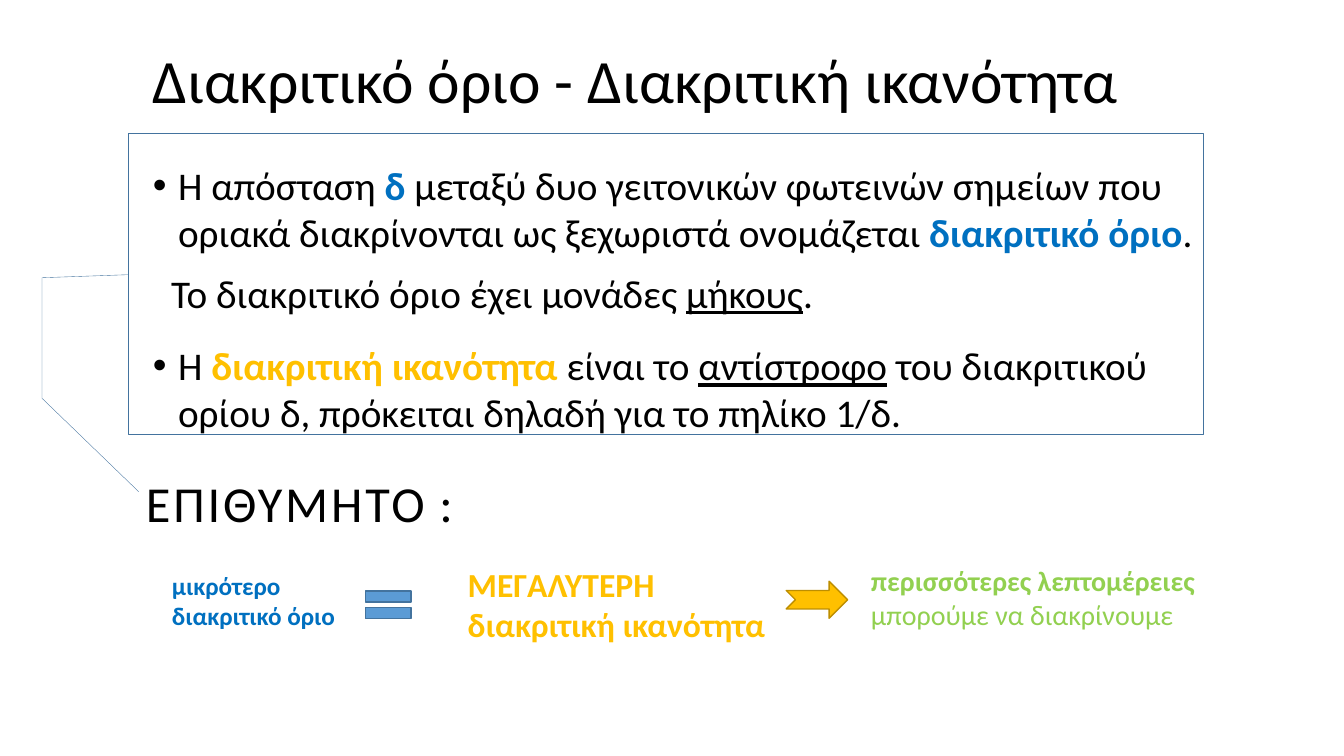
"""Build a slide on the limit of resolution and resolving power."""
from dataclasses import dataclass, field

from lxml import etree
from pptx import Presentation, util as u
from pptx.dml.color import RGBColor
from pptx.enum import shapes, text
from pptx.oxml.ns import qn

COLUMNS, ROWS = 160, 90
FONT = "Calibri"
COLORS = {
    "black": "000000", "blue": "0070C0", "gold": "FFC000", "green": "92D050",
    "steel": "5B9BD5", "steel_line": "43739E", "gold_line": "BD8E00",
}


@dataclass(frozen=True)
class Area:
    column: float
    row: float
    columns: float
    rows: float


@dataclass(frozen=True)
class Words:
    text: str
    color: str = "black"
    format: dict = field(default_factory=dict)
    tracking: int = 0


@dataclass(frozen=True)
class Item:
    words: list[Words]
    format: dict = field(default_factory=dict)
    bullet: str = ""
    margin: float = 0
    indent: float = 0


@dataclass(frozen=True)
class Label:
    area: Area
    size: int
    words: list[Words]
    wrap: bool = True


@dataclass(frozen=True)
class Figure:
    kind: shapes.MSO_SHAPE
    area: Area
    line: str
    line_width: float
    fill: str = ""
    adjustments: tuple[float, ...] = ()


BOLD = {"bold": True}
UNDERLINED = {"underline": True}
BULLETED = {"bullet": "•", "margin": 0.25, "indent": -0.25}

TITLE = Label(Area(17, 1.2, 119.5, 17.4), 44, [Words("Διακριτικό όριο - Διακριτική ικανότητα")])
BODY_AREA = Area(17, 18.6, 127.7, 34.7)
BODY_SIZE = 28
DEFINITIONS = [
    Item([
        Words("Η απόσταση "),
        Words("δ", "blue", BOLD),
        Words(" μεταξύ δυο γειτονικών φωτεινών σημείων που οριακά διακρίνονται "
              "ως ξεχωριστά ονομάζεται "),
        Words("διακριτικό όριο", "blue", BOLD),
        Words("."),
    ], **BULLETED),
    Item([
        Words("Το διακριτικό όριο έχει μονάδες "),
        Words("μήκους", format=UNDERLINED),
        Words("."),
    ], {"space_before": u.Pt(10)}, margin=0.18),
    Item([
        Words("Η "),
        Words("διακριτική ικανότητα ", "gold", BOLD),
        Words("είναι το "),
        Words("αντίστροφο", format=UNDERLINED),
        Words(" του διακριτικού ορίου δ, πρόκειται δηλαδή για το πηλίκο 1/δ."),
    ], {"space_before": u.Pt(18)}, **BULLETED),
]
LABELS = [
    Label(Area(16.2, 55.6, 39.2, 8.5), 36,
          [Words("ΕΠΙΘΥΜΗΤΟ", tracking=200), Words(" :")], wrap=False),
    Label(Area(102.5, 66.5, 43.1, 9.2), 20,
          [Words("περισσότερες λεπτομέρειες ", "green", BOLD),
           Words("μπορούμε να διακρίνουμε", "green")]),
    Label(Area(19.3, 67.3, 25.7, 8.5), 18, [Words("μικρότερο διακριτικό όριο", "blue", BOLD)]),
    Label(Area(54.5, 66.5, 40.1, 10.9), 24,
          [Words("ΜΕΓΑΛΥΤΕΡΗ διακριτική ικανότητα", "gold", BOLD)]),
]
FIGURES = [
    Figure(shapes.MSO_SHAPE.LINE_CALLOUT_3, Area(15.24, 15.84, 128.04, 35.88), "steel_line", 0.25,
           adjustments=(0.47, 0, 0.48, -0.08, 0.88, -0.08, 1.19, 0.01)),
    Figure(shapes.MSO_SHAPE.MATH_EQUAL, Area(42.5, 69.2, 7.4, 5.6), "steel_line", 1, "steel"),
    Figure(shapes.MSO_SHAPE.NOTCHED_RIGHT_ARROW, Area(93.6, 69.2, 7.3, 4.4), "gold_line", 1, "gold"),
]


def apply(target: object, values: dict) -> None:
    for name, value in values.items():
        setattr(target, name, value)


def color(name: str) -> RGBColor:
    return RGBColor.from_string(COLORS[name])


def bounds(presentation, area: Area) -> dict:
    column = presentation.slide_width / COLUMNS
    row = presentation.slide_height / ROWS
    return {
        "left": round(area.column * column), "top": round(area.row * row),
        "width": round(area.columns * column), "height": round(area.rows * row),
    }


def write(paragraph, item: Item, size: int) -> None:
    properties = paragraph._p.get_or_add_pPr()
    properties.set("marL", str(u.Inches(item.margin)))
    properties.set("indent", str(u.Inches(item.indent)))
    if item.bullet:
        etree.SubElement(properties, qn("a:buFont")).set("typeface", "Arial")
        etree.SubElement(properties, qn("a:buChar")).set("char", item.bullet)
    else:
        etree.SubElement(properties, qn("a:buNone"))
    apply(paragraph, {"alignment": text.PP_ALIGN.LEFT, "space_before": u.Pt(0), **item.format})
    for words in item.words:
        run = paragraph.add_run()
        run.text = words.text
        apply(run.font, {"name": FONT, "size": u.Pt(size), **words.format})
        run.font.color.rgb = color(words.color)
        if words.tracking:
            run._r.get_or_add_rPr().set("spc", str(words.tracking))


def add_title(presentation, slide) -> None:
    title = slide.shapes.title
    apply(title, bounds(presentation, TITLE.area))
    apply(title.text_frame, {"auto_size": text.MSO_AUTO_SIZE.NONE,
                             "vertical_anchor": text.MSO_ANCHOR.MIDDLE})
    write(title.text_frame.paragraphs[0], Item(TITLE.words, {"line_spacing": 0.9}), TITLE.size)


def add_definitions(presentation, slide) -> None:
    body = slide.placeholders[1]
    apply(body, bounds(presentation, BODY_AREA))
    frame = body.text_frame
    apply(frame, {"auto_size": text.MSO_AUTO_SIZE.NONE, "vertical_anchor": text.MSO_ANCHOR.TOP})
    for index, item in enumerate(DEFINITIONS):
        paragraph = frame.add_paragraph() if index else frame.paragraphs[0]
        write(paragraph, item, BODY_SIZE)


def add_label(presentation, slide, label: Label) -> None:
    box = slide.shapes.add_textbox(**bounds(presentation, label.area))
    apply(box.text_frame, {"word_wrap": label.wrap,
                           "auto_size": text.MSO_AUTO_SIZE.SHAPE_TO_FIT_TEXT})
    write(box.text_frame.paragraphs[0], Item(label.words), label.size)


def add_figure(presentation, slide, figure: Figure) -> None:
    shape = slide.shapes.add_shape(figure.kind, **bounds(presentation, figure.area))
    shape.shadow.inherit = False
    for index, value in enumerate(figure.adjustments):
        shape.adjustments[index] = value
    if figure.fill:
        shape.fill.solid()
        shape.fill.fore_color.rgb = color(figure.fill)
    else:
        shape.fill.background()
    shape.line.color.rgb = color(figure.line)
    shape.line.width = u.Pt(figure.line_width)


def main() -> None:
    presentation = Presentation()
    apply(presentation, {"slide_width": u.Inches(13.33), "slide_height": u.Inches(7.5)})
    slide = presentation.slides.add_slide(presentation.slide_layouts[1])
    add_title(presentation, slide)
    add_definitions(presentation, slide)
    for label in LABELS:
        add_label(presentation, slide, label)
    for figure in FIGURES:
        add_figure(presentation, slide, figure)
    presentation.save("out.pptx")


if __name__ == "__main__":
    main()
